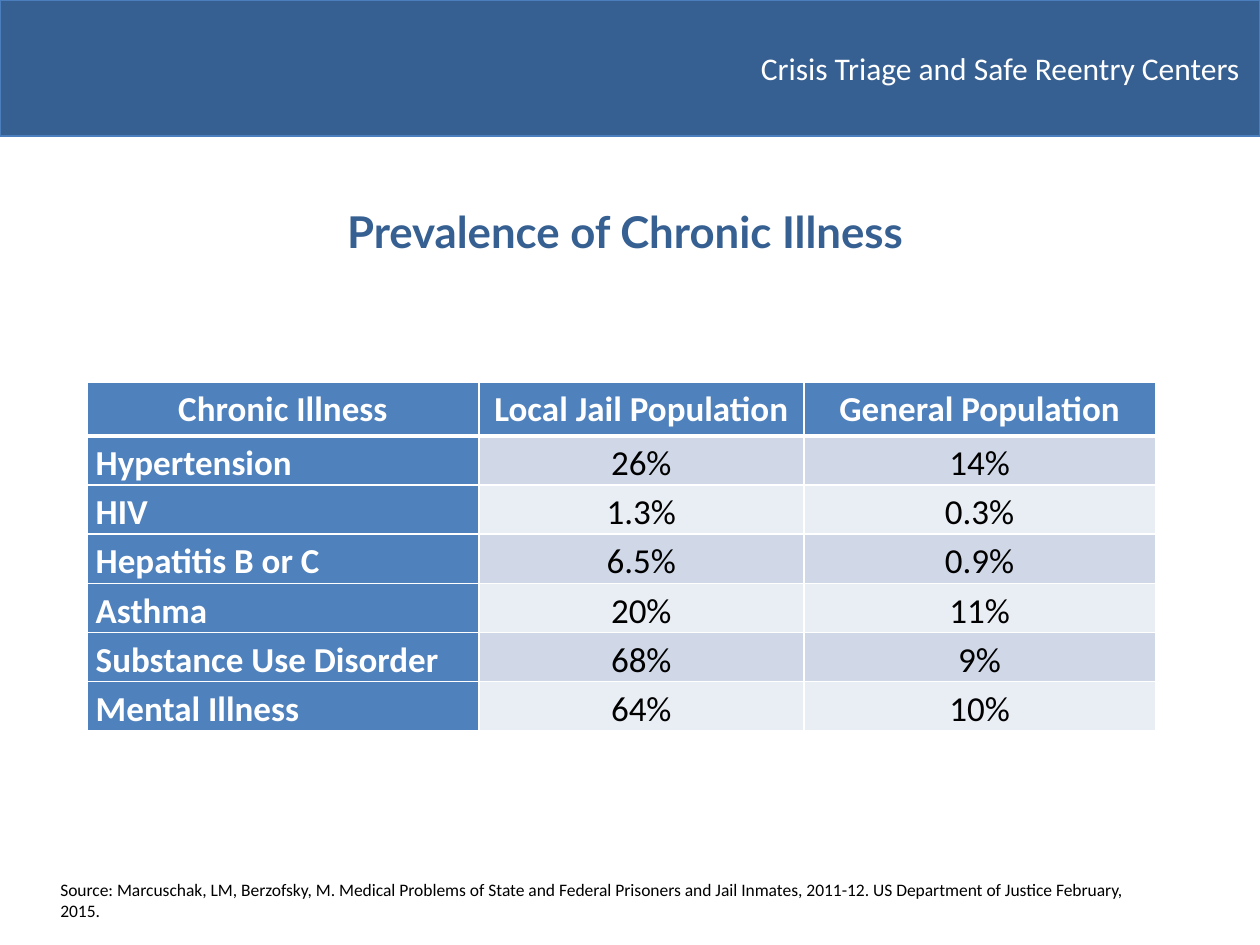
from lxml import etree
from pptx import Presentation
from pptx.dml.color import RGBColor
from pptx.enum.shapes import MSO_SHAPE
from pptx.enum.text import MSO_ANCHOR, PP_ALIGN
from pptx.oxml.ns import qn
from pptx.util import Inches, Pt

RECTANGLE = MSO_SHAPE.RECTANGLE
TOP, MIDDLE = MSO_ANCHOR.TOP, MSO_ANCHOR.MIDDLE
LEFT, CENTER, RIGHT = PP_ALIGN.LEFT, PP_ALIGN.CENTER, PP_ALIGN.RIGHT

BANNER = "Crisis Triage and Safe Reentry Centers"
TITLE = "Prevalence of Chronic Illness"
SOURCE = (
    "Source: Marcuschak, LM, Berzofsky, M. Medical Problems of State and Federal "
    "Prisoners and Jail Inmates, 2011-12. US Department of Justice February, 2015."
)
ROWS = [
    ("Chronic Illness", "Local Jail Population", "General Population"),
    ("Hypertension", "26%", "14%"),
    ("HIV", "1.3%", "0.3%"),
    ("Hepatitis B or C", "6.5%", "0.9%"),
    ("Asthma", "20%", "11%"),
    ("Substance Use Disorder", "68%", "9%"),
    ("Mental Illness", "64%", "10%"),
]
COLUMN_WIDTHS = [3.11, 2.58, 2.79]
HEADER_HEIGHT, ROW_HEIGHT = 0.43, 0.39

THEME = {
    "navy": "376092",
    "banner_line": "4B7EBC",
    "label_fill": "4F81BD",
    "bands": ("D0D8E8", "E9EDF4"),
    "border": "FFFFFF",
    "banner": {"name": "Calibri", "size": 18, "color": "FFFFFF"},
    "title": {"name": "Lato", "size": 25, "color": "376092", "bold": True},
    "label": {"name": "Calibri", "size": 20, "color": "FFFFFF", "bold": True},
    "value": {"name": "Calibri", "size": 20, "color": "000000", "bold": False},
    "source": {"name": "Calibri", "size": 10, "color": "000000"},
}


def paint(fill, color):
    fill.solid()
    fill.fore_color.rgb = RGBColor.from_string(color)


def write(frame, text, style, align):
    para = frame.paragraphs[0]
    para.alignment = align
    span = para.add_run()
    span.text = text
    formats = dict(THEME[style])
    span.font.color.rgb = RGBColor.from_string(formats.pop("color"))
    formats["size"] = Pt(formats["size"])
    for name, value in formats.items():
        setattr(span.font, name, value)
    return para


def add_text(page, place, text, style, align, anchor, bottom=0.05):
    box = page.shapes.add_textbox(*map(Inches, place))
    frame = box.text_frame
    frame.word_wrap = True
    frame.vertical_anchor = anchor
    frame.margin_bottom = Inches(bottom)
    write(frame, text, style, align)


def add_banner(page):
    banner = page.shapes.add_shape(RECTANGLE, 0, 0, Inches(10), Inches(1.08))
    banner.shadow.inherit = False
    paint(banner.fill, THEME["navy"])
    paint(banner.line.fill, THEME["banner_line"])
    banner.line.width = Pt(0.75)
    frame = banner.text_frame
    frame.vertical_anchor = MIDDLE
    frame.margin_right = Inches(0.16)
    write(frame, BANNER, "banner", RIGHT)


def set_borders(cell, widths):
    """Draw the left, right, top and bottom borders, with widths in points."""
    properties = cell._tc.get_or_add_tcPr()
    for index, (side, width) in enumerate(zip(("lnL", "lnR", "lnT", "lnB"), widths)):
        line = etree.Element(qn(f"a:{side}"), w=str(Pt(width)))
        fill = etree.SubElement(line, qn("a:solidFill"))
        etree.SubElement(fill, qn("a:srgbClr"), val=THEME["border"])
        properties.insert(index, line)


def add_illness_table(page):
    heights = [HEADER_HEIGHT] + [ROW_HEIGHT] * (len(ROWS) - 1)
    place = (0.69, 3.03, sum(COLUMN_WIDTHS), sum(heights))
    table = page.shapes.add_table(
        len(ROWS), len(COLUMN_WIDTHS), *map(Inches, place)
    ).table
    table.horz_banding = False
    for column, width in zip(table.columns, COLUMN_WIDTHS):
        column.width = Inches(width)
    for row, height in zip(table.rows, heights):
        row.height = Inches(height)

    for r, texts in enumerate(ROWS):
        for c, text in enumerate(texts):
            cell = table.cell(r, c)
            is_label = r == 0 or c == 0
            band = THEME["bands"][(r - 1) % 2]
            paint(cell.fill, THEME["label_fill"] if is_label else band)
            cell.margin_left = cell.margin_right = Inches(0.07)
            cell.margin_top = cell.margin_bottom = 0
            para = write(
                cell.text_frame,
                text,
                "label" if is_label else "value",
                LEFT if r and c == 0 else CENTER,
            )
            para.line_spacing = 1.15
            set_borders(cell, (1, 1, 3 if r == 1 else 1, 3 if r == 0 else 1))


def main():
    deck = Presentation()
    deck.slide_width, deck.slide_height = Inches(10), Inches(7.5)
    page = deck.slides.add_slide(deck.slide_layouts[6])
    add_banner(page)
    add_text(page, (0.46, 1.56, 9, 0.92), TITLE, "title", CENTER, MIDDLE, bottom=0.43)
    add_illness_table(page)
    add_text(page, (0.38, 6.93, 8.88, 0.44), SOURCE, "source", LEFT, TOP)
    deck.save("out.pptx")


if __name__ == "__main__":
    main()
